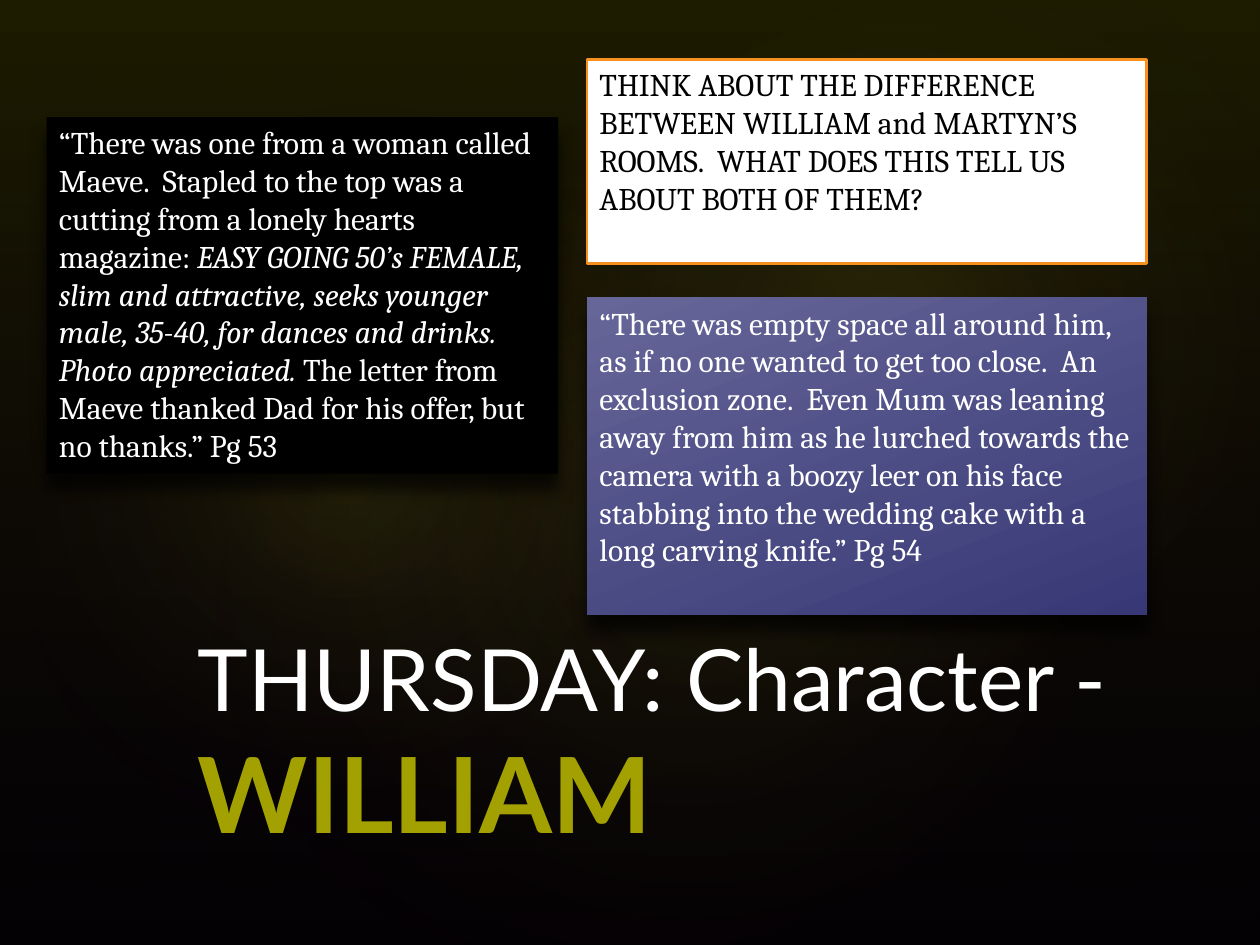
from dataclasses import dataclass

from lxml import etree
from pptx import Presentation
from pptx.dml.color import RGBColor
from pptx.enum.shapes import MSO_SHAPE
from pptx.enum.text import MSO_ANCHOR, MSO_AUTO_SIZE, PP_ALIGN
from pptx.oxml import parse_xml
from pptx.util import Inches, Pt

RECT, OVAL = MSO_SHAPE.RECTANGLE, MSO_SHAPE.OVAL
TOP, BOTTOM = MSO_ANCHOR.TOP, MSO_ANCHOR.BOTTOM
LEFT, FIXED = PP_ALIGN.LEFT, MSO_AUTO_SIZE.NONE
NS = "http://schemas.openxmlformats.org/drawingml/2006/main"
RADIAL = ('<a:path path="circle"><a:fillToRect l="50000" t="50000" '
          'r="50000" b="50000"/></a:path>')
SHADOW = (f'<a:effectLst xmlns:a="{NS}"><a:outerShdw blurRad="114300" '
          'dist="114300" dir="5400000" rotWithShape="0"><a:srgbClr '
          'val="000000"><a:alpha val="70000"/></a:srgbClr>'
          '</a:outerShdw></a:effectLst>')


@dataclass
class Stop:
    pos: int
    color: str
    alpha: int = 100


@dataclass
class Glow:
    box: tuple[float, float, float, float]
    turn: float
    alpha: int


@dataclass
class Quote:
    box: tuple[float, float, float, float]
    runs: list[tuple[str, bool]]  # text, italic
    ink: str
    fill: str = ""
    line: str = ""
    stops: tuple[Stop, ...] = ()


GLOWS = [
    Glow((1.5, 1.14, 7.92, 6.24), 328.7, 7),
    Glow((-0.3, 1.28, 6.06, 4.9), 294.3, 8),
    Glow((3.58, 0.13, 7.09, 5.2), 328.7, 8),
]
QUOTES = [
    Quote((4.66, 0.47, 4.44, 1.62),
          [("THINK ABOUT THE DIFFERENCE BETWEEN WILLIAM and MARTYN’S ROOMS.  "
            "WHAT DOES THIS TELL US ABOUT BOTH OF THEM?", False)],
          "000000", fill="FFFFFF", line="F7901E"),
    Quote((0.37, 0.93, 4.06, 2.83),
          [("“There was one from a woman called Maeve.  Stapled to the top was "
            "a cutting from a lonely hearts magazine: ", False),
           ("EASY GOING 50’s FEMALE, slim and attractive, seeks younger male, "
            "35-40, for dances and drinks.  Photo appreciated.", True),
           (" The letter from Maeve thanked Dad for his offer, but no thanks.” "
            "Pg 53", False)],
          "FFFFFF", fill="000000"),
    Quote((4.66, 2.36, 4.44, 2.52),
          [("“There was empty space all around him, as if no one wanted to get "
            "too close.  An exclusion zone.  Even Mum was leaning away from him "
            "as he lurched towards the camera with a boozy leer on his face "
            "stabbing into the wedding cake with a long carving knife.” Pg 54",
            False)],
          "FFFFFF", stops=(Stop(0, "666699"), Stop(100, "383876"))),
]


def rgb(color: str) -> RGBColor:
    return RGBColor.from_string(color)


def add_box(slide, kind, box):
    """Add a plain shape with no line and no shadow."""
    shape = slide.shapes.add_shape(kind, *map(Inches, box))
    shape.shadow.inherit = False
    shape.line.fill.background()
    return shape


def blend(shape, stops, angle: float | None = None) -> None:
    """Fill with a gradient: linear at an angle, or radial without one."""
    shape.fill.background()
    marks = "".join(
        f'<a:gs pos="{s.pos * 1000}"><a:srgbClr val="{s.color}">'
        f'<a:alpha val="{s.alpha * 1000}"/></a:srgbClr></a:gs>' for s in stops)
    way = (RADIAL if angle is None
           else f'<a:lin ang="{int(angle * 60000)}" scaled="0"/>')
    grad = parse_xml(f'<a:gradFill xmlns:a="{NS}" rotWithShape="1">'
                     f'<a:gsLst>{marks}</a:gsLst>{way}</a:gradFill>')
    props = shape._element.spPr
    props.replace(props.find(f"{{{NS}}}noFill"), grad)


def add_glow(slide, glow: Glow):
    shape = add_box(slide, OVAL, glow.box)
    shape.rotation = glow.turn
    blend(shape, (Stop(0, "FEFB31", glow.alpha), Stop(58, "2B142D", 0)))
    return shape


def add_quote(slide, quote: Quote) -> None:
    shape = add_box(slide, RECT, quote.box)
    if quote.stops:
        blend(shape, quote.stops, 69)
    else:
        shape.fill.solid()
        shape.fill.fore_color.rgb = rgb(quote.fill)
    if quote.line:
        shape.line.color.rgb = rgb(quote.line)
        shape.line.width = Pt(1.5)
    else:
        props = shape._element.spPr
        props.replace(props.find(f"{{{NS}}}effectLst"), parse_xml(SHADOW))
    frame = shape.text_frame
    frame.word_wrap = True
    frame.vertical_anchor = TOP
    para = frame.paragraphs[0]
    para.alignment = LEFT
    para.font.name, para.font.size = "Cambria", Pt(18)
    para.font.color.rgb = rgb(quote.ink)
    for text, slant in quote.runs:
        run = para.add_run()
        run.text = text
        # Runs carry the full font, as a shape's style sets its own colour
        run.font.name, run.font.size = "Cambria", Pt(18)
        run.font.color.rgb = rgb(quote.ink)
        run.font.italic = slant


def set_title(title) -> None:
    title.left, title.top = Inches(1.47), Inches(5.83)
    title.width, title.height = Inches(8.25), Inches(1)
    frame = title.text_frame
    frame.word_wrap = True
    frame.auto_size = FIXED
    frame.vertical_anchor = BOTTOM
    para = frame.paragraphs[0]
    para.alignment = LEFT
    for text, size, color, bold in (
            ("THURSDAY: Character - ", 49, "FFFFFF", False),
            ("WILLIAM", 60, "A3A101", True)):
        run = para.add_run()
        run.text = text
        run.font.name, run.font.size = "Lato", Pt(size)
        run.font.color.rgb = rgb(color)
        run.font.bold = bold
    edge = etree.Element(f"{{{NS}}}ln", w=str(Pt(1.42)))
    fill = etree.SubElement(edge, f"{{{NS}}}solidFill")
    etree.SubElement(fill, f"{{{NS}}}srgbClr", val="FFFFFF")
    run.font._element.insert(0, edge)


def main() -> None:
    deck = Presentation()
    deck.slide_width, deck.slide_height = Inches(10), Inches(7.5)
    slide = deck.slides.add_slide(deck.slide_layouts[5])
    back = slide.background.fill
    back.solid()
    back.fore_color.rgb = rgb("000000")
    shade = add_box(slide, RECT, (0, 0, 10, 7.5))
    blend(shade, (Stop(0, "525000", 36), Stop(100, "2B142D", 10)), 90)
    glows = [add_glow(slide, glow) for glow in GLOWS]
    title = slide.shapes.title
    set_title(title)
    glows[-1]._element.addnext(title._element)
    for quote in QUOTES:
        add_quote(slide, quote)
    deck.save("out.pptx")


if __name__ == "__main__":
    main()
